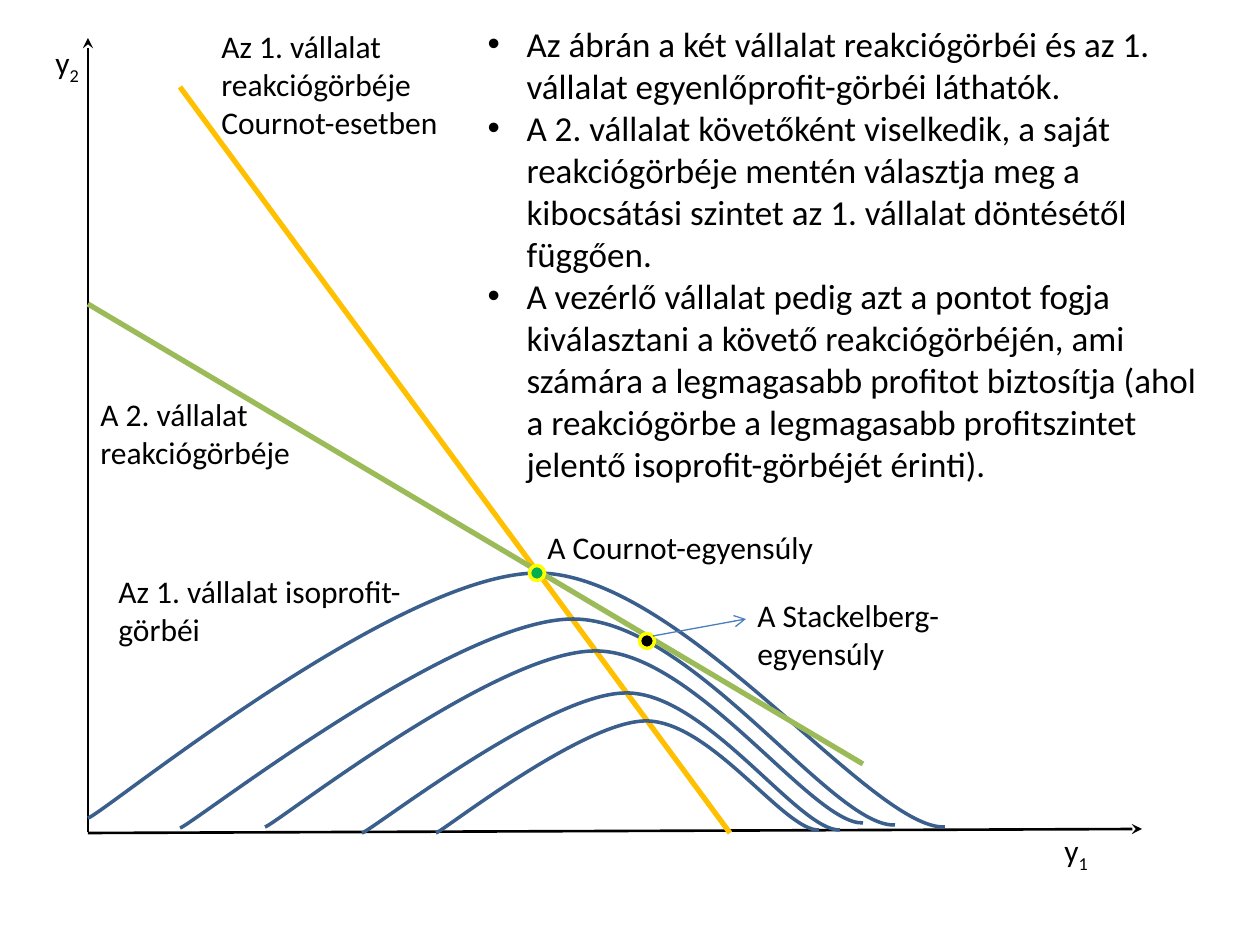
from lxml import etree
from pptx import Presentation
from pptx.dml.color import RGBColor
from pptx.enum import shapes, text
from pptx.oxml.ns import qn
from pptx import util as u

SCALE = 914400 / 126
FONT = "Calibri"
BLACK = RGBColor(0x00, 0x00, 0x00)
ORANGE = RGBColor(0xFF, 0xC0, 0x00)
OLIVE = RGBColor(0x9B, 0xBB, 0x59)
NAVY = RGBColor(0x3A, 0x5F, 0x8C)
BLUE = RGBColor(0x4B, 0x7E, 0xBC)
GREEN = RGBColor(0x00, 0xB0, 0x50)
YELLOW = RGBColor(0xFF, 0xFF, 0x00)

BULLETS = [
    "Az ábrán a két vállalat reakciógörbéi és az 1. vállalat egyenlőprofit-görbéi láthatók.",
    "A 2. vállalat követőként viselkedik, a saját reakciógörbéje mentén választja meg "
    "a kibocsátási szintet az 1. vállalat döntésétől függően.",
    "A vezérlő vállalat pedig azt a pontot fogja kiválasztani a követő reakciógörbéjén, "
    "ami számára a legmagasabb profitot biztosítja (ahol a reakciógörbe a legmagasabb "
    "profitszintet jelentő isoprofit-görbéjét érinti).",
]
BULLETS_BOX = (475, 16, 750, 479)
BULLET_INDENT = 39

AXES_AND_REACTION_1 = [
    ((88, 832), (88, 38), BLACK, 1.5, "stealth"),
    ((88, 833), (1142, 829), BLACK, 1.5, "stealth"),
    ((180, 87), (730, 833), ORANGE, 3, None),
]
REACTION_2 = ((88, 304), (863, 764), OLIVE, 3, None)
STACKELBERG_ARROW = ((653, 636), (746, 619), BLUE, 0.75, "arrow")

ISOPROFIT_CURVES = [
    [(863, 823), (812, 825), (694, 650), (595, 651), (495, 651), (275, 825), (265, 827)],
    [(840, 830), (799, 832), (706, 692), (626, 693), (547, 693), (370, 832), (362, 833)],
    [(895, 825), (832, 828), (692, 619), (573, 619), (454, 619), (192, 825), (180, 828)],
    [(819, 830), (785, 832), (711, 721), (646, 721), (583, 721), (442, 832), (436, 833)],
    [(945, 827), (871, 830), (683, 575), (539, 573), (397, 572), (102, 815), (88, 818)],
]

EQUILIBRIA = [((537, 573), GREEN), ((647, 641), BLACK)]
DOT_SIZE = 15

AXIS_LABELS = [((43, 37, 89, 50), "y", "2"), ((1052, 825, 89, 50), "y", "1")]
LABELS = [
    ((209, 21, 318, 127), ["Az 1. vállalat reakciógörbéje", "Cournot-esetben"]),
    ((88, 389, 318, 89), ["A 2. vállalat reakciógörbéje"]),
    ((535, 522, 318, 50), ["A Cournot-egyensúly"]),
    ((745, 590, 318, 89), ["A Stackelberg-egyensúly"]),
    ((106, 566, 318, 89), ["Az 1. vállalat isoprofit-görbéi"]),
]


def px(*values):
    return [u.Emu(round(value * SCALE)) for value in values]


def apply(target, values):
    for name, value in values.items():
        setattr(target, name, value)


def style_line(line, color, width):
    line.color.rgb = color
    line.width = u.Pt(width)


def style_run(run, size):
    apply(run.font, {"name": FONT, "size": u.Pt(size)})
    run.font.color.rgb = BLACK


def add_line(slide, start, end, color, width, arrowhead):
    connector = slide.shapes.add_connector(shapes.MSO_CONNECTOR.STRAIGHT, *px(*start, *end))
    style_line(connector.line, color, width)
    if arrowhead:
        etree.SubElement(connector.line._get_or_add_ln(), qn("a:tailEnd"), type=arrowhead)
    etree.SubElement(connector._element.spPr, qn("a:effectLst"))


def add_curve(slide, points):
    builder = slide.shapes.build_freeform(*points[0], scale=SCALE)
    builder.add_line_segments(points[1:], close=False)
    shape = builder.convert_to_shape()
    shape.shadow.inherit = False
    shape.fill.background()
    style_line(shape.line, NAVY, 2)
    outline = next(shape._element.iter(qn("a:path")))
    segments = outline.findall(qn("a:lnTo"))
    for first in range(0, len(segments), 3):
        bezier = etree.SubElement(outline, qn("a:cubicBezTo"))
        for segment in segments[first:first + 3]:
            bezier.append(segment[0])
            outline.remove(segment)


def add_dot(slide, center, color):
    left, top = (value - DOT_SIZE / 2 for value in center)
    shape = slide.shapes.add_shape(
        shapes.MSO_SHAPE.OVAL, *px(left, top, DOT_SIZE, DOT_SIZE))
    shape.shadow.inherit = False
    shape.fill.solid()
    shape.fill.fore_color.rgb = color
    style_line(shape.line, YELLOW, 2)


def add_label(slide, box, lines):
    frame = slide.shapes.add_textbox(*px(*box)).text_frame
    frame.word_wrap = True
    frame.text = "\n".join(lines)
    for paragraph in frame.paragraphs:
        style_run(paragraph.runs[0], 18)
    return frame.paragraphs[0]


def add_axis_label(slide, box, letter, index):
    paragraph = add_label(slide, box, [letter])
    run = paragraph.add_run()
    run.text = index
    style_run(run, 18)
    run.font._element.set("baseline", "-25000")


def fill_bullets(body):
    apply(body, dict(zip(("left", "top", "width", "height"), px(*BULLETS_BOX))))
    frame = body.text_frame
    frame.text = "\n".join(BULLETS)
    apply(frame, {"word_wrap": True, "auto_size": text.MSO_AUTO_SIZE.NONE,
                  "vertical_anchor": text.MSO_ANCHOR.TOP})
    indent, = px(BULLET_INDENT)
    for paragraph in frame.paragraphs:
        apply(paragraph, {"space_before": u.Pt(0), "alignment": text.PP_ALIGN.LEFT})
        properties = paragraph._p.get_or_add_pPr()
        properties.set("marL", str(indent))
        properties.set("indent", str(-indent))
        etree.SubElement(properties, qn("a:buFont"), typeface="Arial")
        etree.SubElement(properties, qn("a:buChar"), char="•")
        style_run(paragraph.runs[0], 20)


def main():
    presentation = Presentation()
    apply(presentation, {"slide_width": u.Inches(10), "slide_height": u.Inches(7.5)})
    slide = presentation.slides.add_slide(presentation.slide_layouts[1])
    title = slide.shapes.title._element
    title.getparent().remove(title)
    fill_bullets(slide.placeholders[1])
    for line in AXES_AND_REACTION_1:
        add_line(slide, *line)
    for points in ISOPROFIT_CURVES:
        add_curve(slide, points)
    add_line(slide, *REACTION_2)
    for center, color in EQUILIBRIA:
        add_dot(slide, center, color)
    add_line(slide, *STACKELBERG_ARROW)
    for label in AXIS_LABELS:
        add_axis_label(slide, *label)
    for label in LABELS:
        add_label(slide, *label)
    presentation.save("out.pptx")


if __name__ == "__main__":
    main()
